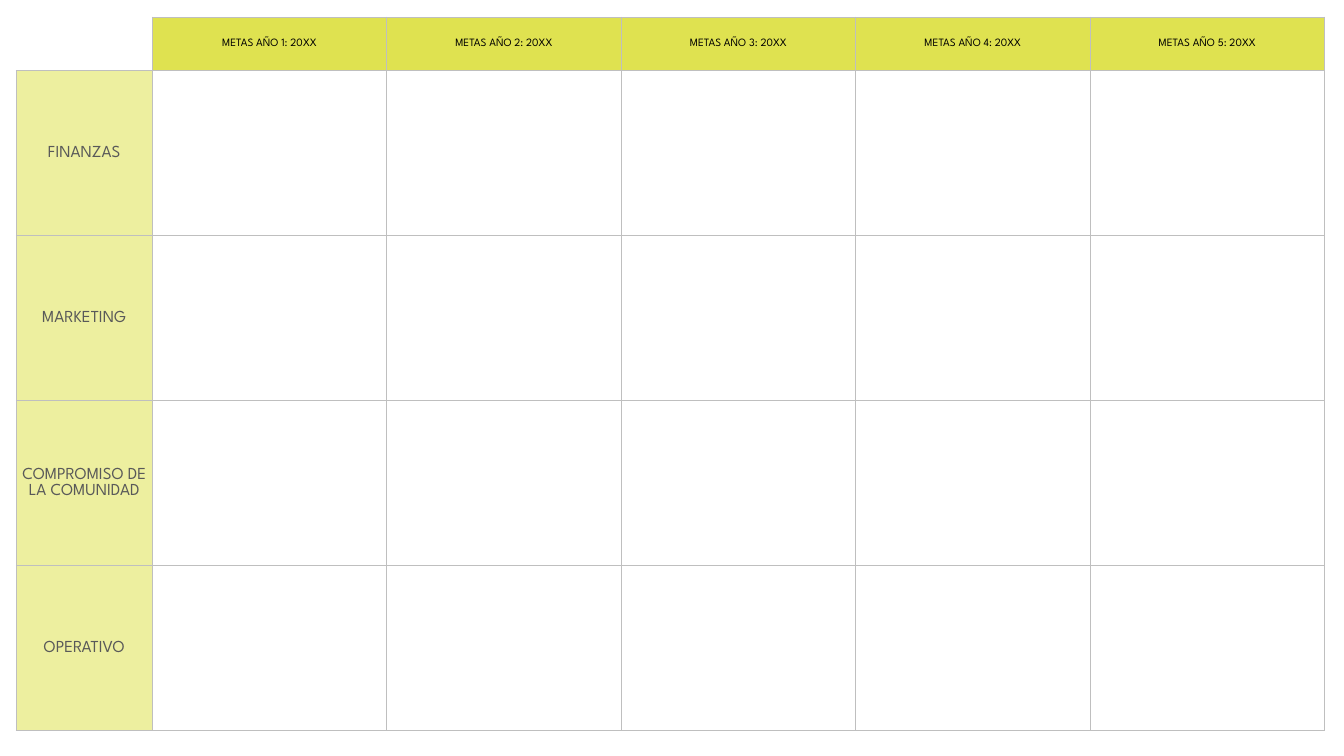
from lxml import etree
from pptx import Presentation, util as u
from pptx.dml import color
from pptx.enum import text
from pptx.oxml import ns

COLOURS = {
    "header": "DFE250",
    "area": "EDEF9F",
    "border": "BFBFBF",
    "header_text": "000000",
    "area_text": "595959",
}
FONT = "League Spartan"
YEARS = [f"METAS AÑO {year}: 20XX" for year in range(1, 6)]
AREAS = ["FINANZAS", "MARKETING", "COMPROMISO DE LA COMUNIDAD", "OPERATIVO"]
LABEL_WIDTH = 97.2
HEADER_HEIGHT = 38.2
CELL_FORMAT = {
    "margin_left": u.Pt(0.72),
    "margin_right": u.Pt(0.72),
    "margin_top": u.Pt(0.72),
    "margin_bottom": 0,
    "vertical_anchor": text.MSO_ANCHOR.MIDDLE,
}


def add_borders(cell, sides):
    """Draw thin solid borders on the given sides of a cell."""
    properties = cell._tc.get_or_add_tcPr()
    for position, side in enumerate(sides):
        line = etree.Element(ns.qn(f"a:ln{side}"), w=str(u.Pt(0.5)))
        fill = etree.SubElement(line, ns.qn("a:solidFill"))
        etree.SubElement(fill, ns.qn("a:srgbClr"), val=COLOURS["border"])
        properties.insert(position, line)


def write_label(cell, label, kind, size):
    """Fill a cell and centre its label in the style of its kind."""
    cell.fill.solid()
    cell.fill.fore_color.rgb = color.RGBColor.from_string(COLOURS[kind])
    for name, value in CELL_FORMAT.items():
        setattr(cell, name, value)
    paragraph = cell.text_frame.paragraphs[0]
    paragraph.alignment = text.PP_ALIGN.CENTER
    run = paragraph.add_run()
    run.text = label
    for name, value in {"name": FONT, "size": u.Pt(size)}.items():
        setattr(run.font, name, value)
    run.font.color.rgb = color.RGBColor.from_string(COLOURS[f"{kind}_text"])


def add_goals_table(slide, left, top, width, height):
    """Place the grid of yearly goals by area in the given box."""
    box = [u.Pt(length) for length in (left, top, width, height)]
    table = slide.shapes.add_table(len(AREAS) + 1, len(YEARS) + 1, *box).table
    for name in ("first_row", "horz_banding"):
        setattr(table, name, False)

    year_width = (width - LABEL_WIDTH) / len(YEARS)
    for index, column in enumerate(table.columns):
        column.width = u.Pt(year_width if index else LABEL_WIDTH)
    area_height = (height - HEADER_HEIGHT) / len(AREAS)
    for index, row in enumerate(table.rows):
        row.height = u.Pt(area_height if index else HEADER_HEIGHT)

    for cell in table.iter_cells():
        cell.fill.background()
    for index, year in enumerate(YEARS, 1):
        write_label(table.cell(0, index), year, "header", 8)
    for index, area in enumerate(AREAS, 1):
        write_label(table.cell(index, 0), area, "area", 12)
    for index, cell in enumerate(table.iter_cells()):
        add_borders(cell, "LRTB" if index else "RB")


def main():
    """Build the slide and save the presentation."""
    presentation = Presentation()
    presentation.slide_width = u.Pt(960)
    presentation.slide_height = u.Pt(540)
    slide = presentation.slides.add_slide(presentation.slide_layouts[6])
    add_goals_table(slide, 11.6, 12.2, 934.6, 509.8)
    presentation.save("out.pptx")


if __name__ == "__main__":
    main()
